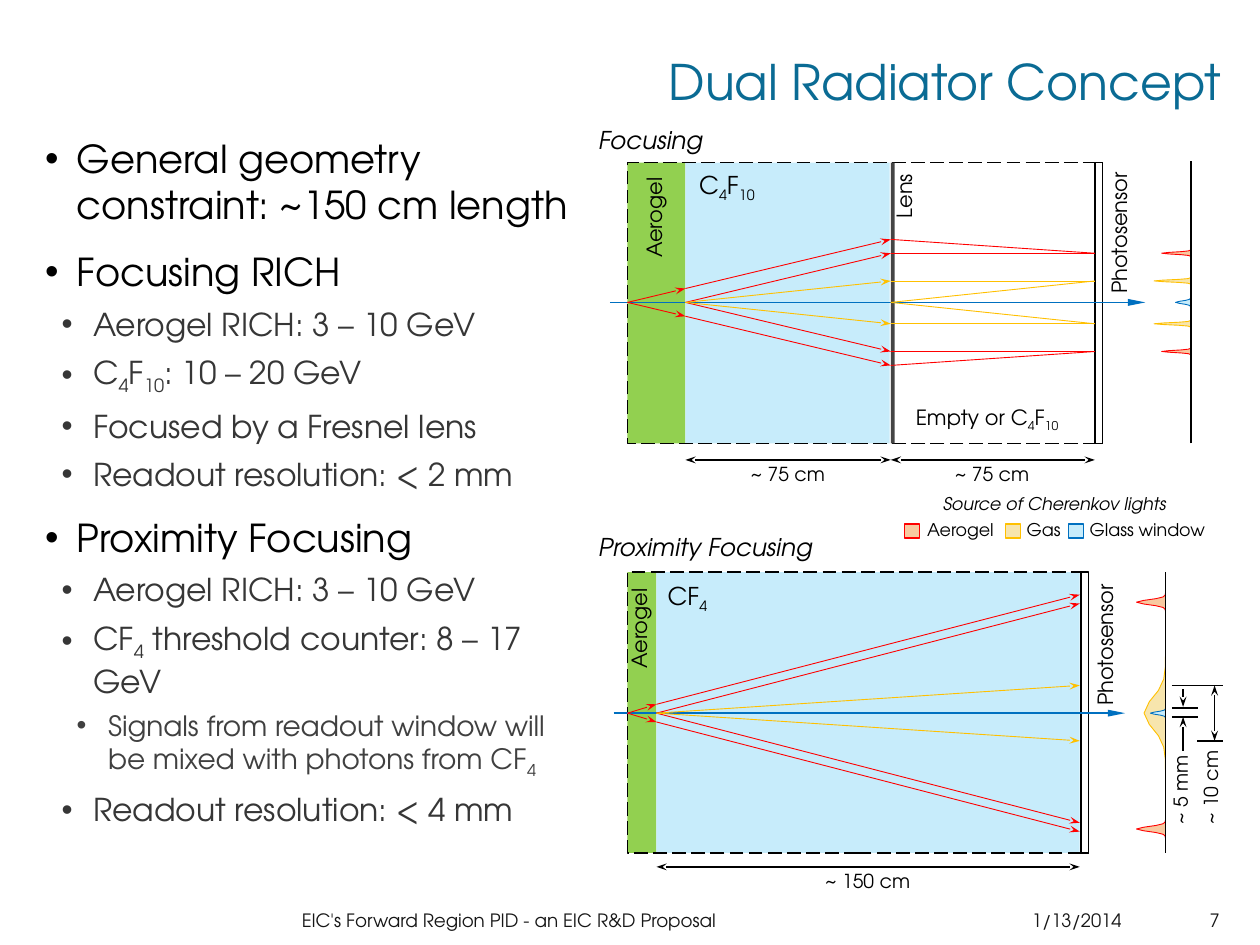
from pptx import Presentation
from pptx.util import Inches, Pt
from pptx.dml.color import RGBColor
from pptx.enum.dml import MSO_LINE
from pptx.enum.shapes import MSO_SHAPE, MSO_CONNECTOR
from pptx.enum.text import PP_ALIGN, MSO_ANCHOR, MSO_AUTO_SIZE
from pptx.oxml.ns import qn
from lxml.etree import SubElement
from math import exp

FONT = "TeX Gyre Adventor"
BLACK = RGBColor(0x00, 0x00, 0x00)
TEAL = RGBColor(0x0A, 0x6B, 0x94)
DARK = RGBColor(0x36, 0x36, 0x36)
GRAY = RGBColor(0x40, 0x40, 0x40)
INK = RGBColor(0x16, 0x16, 0x16)
GREEN = RGBColor(0x92, 0xD0, 0x50)
SKY = RGBColor(0xC7, 0xEC, 0xFB)
STEEL = RGBColor(0x45, 0x45, 0x45)
BLUE = RGBColor(0x00, 0x70, 0xC0)
RED = RGBColor(0xFF, 0x00, 0x00)
GOLD = RGBColor(0xFF, 0xC0, 0x00)
PEACH = RGBColor(0xF8, 0xC9, 0xA0)
CREAM = RGBColor(0xF7, 0xE5, 0xAD)

LEVELS = [(22, BLACK, 12, 0.25), (18, DARK, 6, 0.38), (16, GRAY, 5, 0.5)]
POINTS = [
    (0, "General geometry constraint: ~150 cm length"),
    (0, "Focusing RICH"),
    (1, "Aerogel RICH: 3 – 10 GeV"),
    (1, "C|4|F|10|: 10 – 20 GeV"),
    (1, "Focused by a Fresnel lens"),
    (1, "Readout resolution: < 2 mm"),
    (0, "Proximity Focusing"),
    (1, "Aerogel RICH: 3 – 10 GeV"),
    (1, "CF|4| threshold counter: 8 – 17 GeV"),
    (2, "Signals from readout window will be mixed with photons from CF|4"),
    (1, "Readout resolution: < 4 mm"),
]


def write(para, text, size, color=BLACK, italic=False):
    for i, part in enumerate(text.split("|")):
        run = para.add_run()
        run.text = part
        font = run.font
        font.name, font.size, font.italic = FONT, Pt(size), italic
        font.color.rgb = color
        if i % 2:
            font._element.set("baseline", "-25000")


def add_box(slide, x, y, w, h):
    return slide.shapes.add_textbox(Inches(x), Inches(y), Inches(w), Inches(h))


def add_label(slide, x, y, w, h, text, size, italic=False, turn=0):
    box = add_box(slide, x, y, w, h)
    box.rotation = turn
    frame = box.text_frame
    frame.word_wrap = False
    frame.auto_size = MSO_AUTO_SIZE.SHAPE_TO_FIT_TEXT
    write(frame.paragraphs[0], text, size, italic=italic)


def add_foot(slide, x, w, text, align):
    frame = add_box(slide, x, 7.1, w, 0.4).text_frame
    frame.word_wrap = True
    frame.vertical_anchor = MSO_ANCHOR.MIDDLE
    frame.paragraphs[0].alignment = align
    write(frame.paragraphs[0], text, 10.5, INK)


def paint(shape, fill, line, width=1):
    shape.shadow.inherit = False
    if fill is None:
        shape.fill.background()
    else:
        shape.fill.solid()
        shape.fill.fore_color.rgb = fill
    if line is None:
        shape.line.fill.background()
    else:
        shape.line.color.rgb = line
        shape.line.width = Pt(width)


def add_rect(slide, x, y, w, h, fill=None, line=None, width=1, dash=False):
    rect = slide.shapes.add_shape(
        MSO_SHAPE.RECTANGLE, Inches(x), Inches(y), Inches(w), Inches(h))
    paint(rect, fill, line, width)
    if dash:
        rect.line.dash_style = MSO_LINE.LONG_DASH


def add_line(slide, x1, y1, x2, y2, color=BLACK, width=0.75,
             head=None, tail=None, reach="med"):
    line = slide.shapes.add_connector(
        MSO_CONNECTOR.STRAIGHT, Inches(x1), Inches(y1), Inches(x2), Inches(y2))
    line.line.color.rgb = color
    line.line.width = Pt(width)
    for tag, kind in (("a:headEnd", head), ("a:tailEnd", tail)):
        if kind:
            SubElement(line.line._get_or_add_ln(), qn(tag),
                       type=kind, w="sm", len=reach)
    SubElement(line._element.spPr, qn("a:effectLst"))


def add_span(slide, x1, y1, x2, y2):
    add_line(slide, x1, y1, x2, y2, head="stealth", tail="stealth")


def add_axis(slide, x1, x2, y):
    add_line(slide, x1, y, x2, y, BLUE, 1, tail="triangle", reach="lg")


def add_rays(slide, axis, rays):
    for color, x1, rise1, x2, rise2, tail in rays:
        for side in (-1, 1):
            add_line(slide, x1, axis + side * rise1, x2, axis + side * rise2,
                     color, 0.5, tail=tail)


def add_peak(slide, base, mid, high, half, fill, line):
    steps = [i / 5 for i in range(-5, 6)]
    dots = [(Inches(base - high * exp(-7 * t * t)), Inches(mid + half * t))
            for t in steps]
    pen = slide.shapes.build_freeform(*dots[0])
    pen.add_line_segments(dots[1:], close=False)
    paint(pen.convert_to_shape(), fill, line, 0.5)


def add_tank(slide, top, gel, gas, width):
    left, high, slit = 4.98, 2.23, 0.06
    add_rect(slide, left, top, gel, high, GREEN)
    add_rect(slide, left + gel, top, gas, high, SKY)
    add_rect(slide, left, top, width, high, line=BLACK, dash=True)
    add_rect(slide, left + width - slit, top, slit, high, line=BLACK)


def add_title(slide):
    title = slide.shapes.title
    title.left, title.top = Inches(2.05), Inches(0.09)
    title.width, title.height = Inches(7.74), Inches(0.84)
    frame = title.text_frame
    frame.vertical_anchor = MSO_ANCHOR.BOTTOM
    para = frame.paragraphs[0]
    para.alignment = PP_ALIGN.RIGHT
    para.line_spacing = 0.9
    write(para, "Dual Radiator Concept", 28, TEAL)


def add_points(slide):
    frame = add_box(slide, 0.26, 1.02, 4.49, 5.98).text_frame
    frame.word_wrap = True
    for i, (level, text) in enumerate(POINTS):
        para = frame.add_paragraph() if i else frame.paragraphs[0]
        size, color, space, indent = LEVELS[level]
        para.level = level
        para.space_before = Pt(space if i else 0)
        props = para._p.get_or_add_pPr()
        props.set("marL", str(Inches(indent)))
        props.set("indent", str(Inches(-0.25)))
        SubElement(props, qn("a:buFont"), typeface="Arial")
        SubElement(props, qn("a:buChar"), char="•")
        write(para, text, size, color)


def add_focus(slide):
    axis, gel, lens, end = 2.4, 5.44, 7.07, 8.69
    add_tank(slide, 1.29, 0.46, 1.62, 3.77)
    add_rect(slide, lens, 1.29, 0.03, 2.23, STEEL)
    add_axis(slide, 4.84, 9.09, axis)
    add_rays(slide, axis, [
        (RED, 4.98, 0, gel, 0.11, "stealth"),
        (RED, gel, 0.11, lens, 0.5, "stealth"),
        (RED, gel, 0, lens, 0.39, "stealth"),
        (RED, lens, 0.39, end, 0.39, None),
        (RED, lens, 0.5, end, 0.39, None),
        (GOLD, gel, 0, lens, 0.17, "stealth"),
        (GOLD, lens, 0.17, end, 0.17, None),
        (GOLD, lens, 0, end, 0.17, None)])
    for x1, x2, x in ((gel, lens, 5.86), (lens, end, 7.48)):
        add_span(slide, x1, 3.65, x2, 3.65)
        add_label(slide, x, 3.62, 0.8, 0.29, "~ 75 cm", 11)
    add_label(slide, 4.65, 0.94, 1.03, 0.34, "Focusing", 14, True)
    add_label(slide, 5.45, 1.3, 0.71, 0.35, "C|4|F|10", 14)
    add_label(slide, 7.17, 3.16, 1.46, 0.32, "Empty or C|4|F|10", 12)
    add_label(slide, 4.76, 1.54, 0.89, 0.32, "Aerogel", 12, turn=270)
    add_label(slide, 6.9, 1.38, 0.58, 0.32, "Lens", 12, turn=270)
    add_label(slide, 8.27, 1.65, 1.24, 0.32, "Photosensor", 12, turn=270)
    for side in (-1, 1):
        add_peak(slide, 9.45, axis + side * 0.39, 0.23, 0.03, PEACH, RED)
        add_peak(slide, 9.45, axis + side * 0.17, 0.29, 0.03, CREAM, GOLD)
    add_peak(slide, 9.45, axis, 0.12, 0.04, SKY, BLUE)
    add_line(slide, 9.45, 3.52, 9.45, 1.28, width=1)


def add_near(slide):
    axis, gel, end = 5.66, 5.21, 8.57
    add_tank(slide, 4.54, 0.23, 3.36, 3.66)
    add_axis(slide, 4.87, 8.93, axis)
    add_rays(slide, axis, [
        (RED, 4.98, 0, gel, 0.07, "stealth"),
        (RED, gel, 0.07, end, 0.94, "stealth"),
        (RED, gel, 0, end, 0.87, "stealth"),
        (GOLD, gel, 0, end, 0.22, "stealth")])
    add_span(slide, gel, 6.88, end, 6.88)
    add_label(slide, 4.65, 4.17, 1.92, 0.34, "Proximity Focusing", 14, True)
    add_label(slide, 5.2, 4.56, 0.56, 0.35, "CF|4", 14)
    add_label(slide, 6.45, 6.85, 0.88, 0.29, "~ 150 cm", 11)
    add_label(slide, 4.64, 4.8, 0.89, 0.32, "Aerogel", 12, turn=270)
    add_label(slide, 8.16, 4.92, 1.24, 0.32, "Photosensor", 12, turn=270)
    for side in (-1, 1):
        add_peak(slide, 9.25, axis + 0.02 + side * 0.9, 0.23, 0.07, PEACH, RED)
    add_peak(slide, 9.25, axis, 0.17, 0.45, CREAM, GOLD)
    add_peak(slide, 9.25, axis, 0.12, 0.04, SKY, BLUE)
    add_line(slide, 9.25, 6.77, 9.25, 4.54, width=1)
    for x1, x2, y in ((9.3, 9.71, 5.44), (9.5, 9.71, 5.88),
                      (9.3, 9.51, 5.62), (9.3, 9.51, 5.69)):
        add_line(slide, x1, y, x2, y)
    add_span(slide, 9.64, 5.44, 9.64, 5.88)
    add_line(slide, 9.39, 5.47, 9.39, 5.61, tail="stealth")
    add_line(slide, 9.39, 5.69, 9.39, 5.96, head="stealth")
    add_label(slide, 8.97, 6.1, 0.8, 0.29, "~ 5 mm", 11, turn=270)
    add_label(slide, 9.21, 6.1, 0.8, 0.29, "~ 10 cm", 11, turn=270)


def add_legend(slide):
    frame = add_box(slide, 7.03, 3.86, 2.68, 0.48).text_frame
    frame.word_wrap = True
    head, keys = frame.paragraphs[0], frame.add_paragraph()
    head.alignment = PP_ALIGN.CENTER
    head.space_after = Pt(3)
    write(head, "Source of Cherenkov lights", 10, italic=True)
    tabs = SubElement(keys._p.get_or_add_pPr(), qn("a:tabLst"))
    for stop in (0.23, 1.02, 1.52):
        SubElement(tabs, qn("a:tab"), pos=str(Inches(stop)), algn="l")
    write(keys, "\tAerogel\tGas\tGlass window", 10)
    for x, fill, line in ((7.18, PEACH, RED), (7.98, CREAM, GOLD),
                          (8.48, SKY, BLUE)):
        add_rect(slide, x, 4.16, 0.12, 0.11, fill, line, 0.75)


def main():
    deck = Presentation()
    deck.slide_width, deck.slide_height = Inches(10), Inches(7.5)
    slide = deck.slides.add_slide(deck.slide_layouts[5])
    add_title(slide)
    add_points(slide)
    add_focus(slide)
    add_near(slide)
    add_legend(slide)
    add_foot(slide, 7.92, 1.25, "1/13/2014", PP_ALIGN.CENTER)
    add_foot(slide, 0.25, 7.58,
             "EIC's Forward Region PID - an EIC R&D Proposal", PP_ALIGN.CENTER)
    add_foot(slide, 9.25, 0.53, "7", PP_ALIGN.RIGHT)
    deck.save("out.pptx")


if __name__ == "__main__":
    main()
